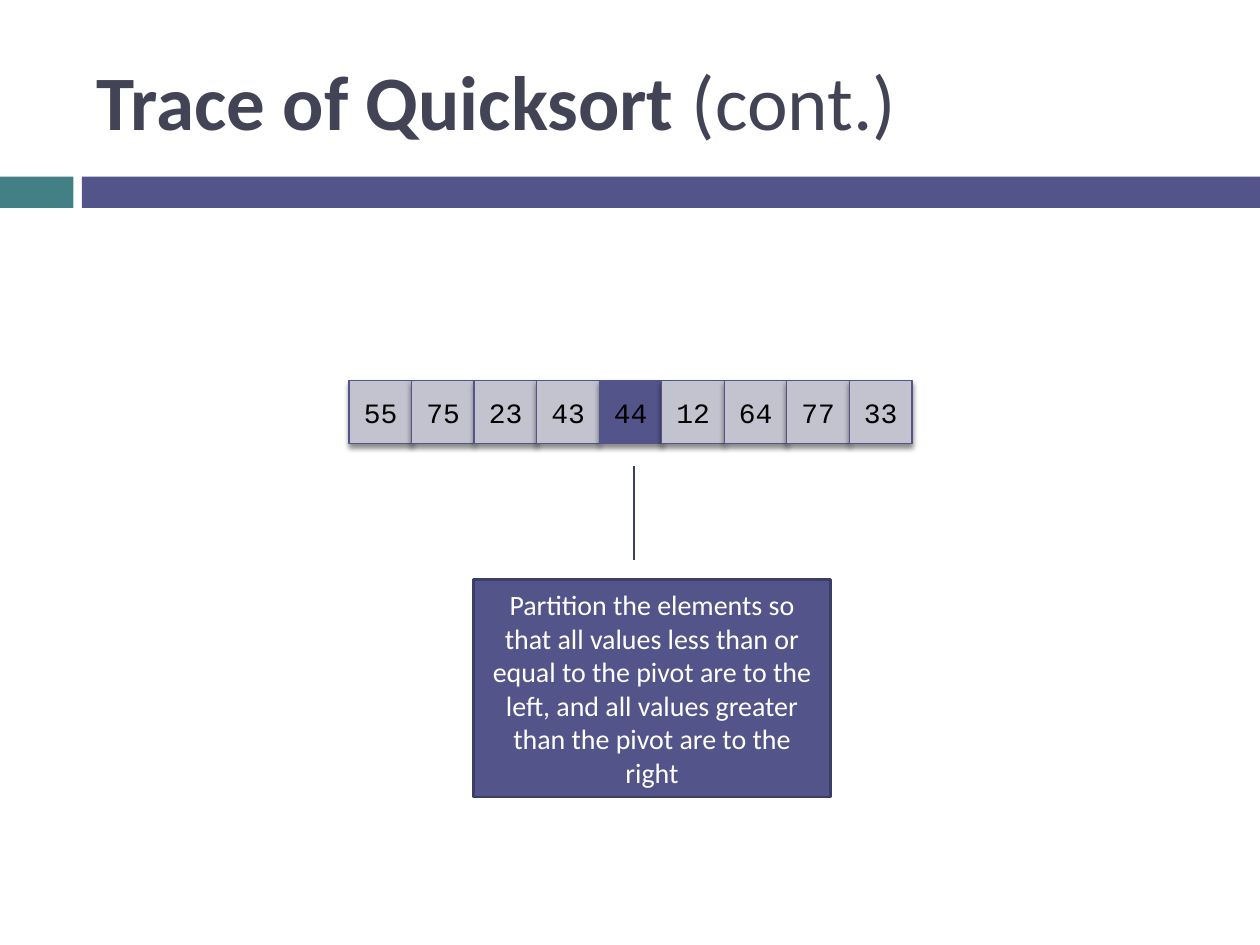
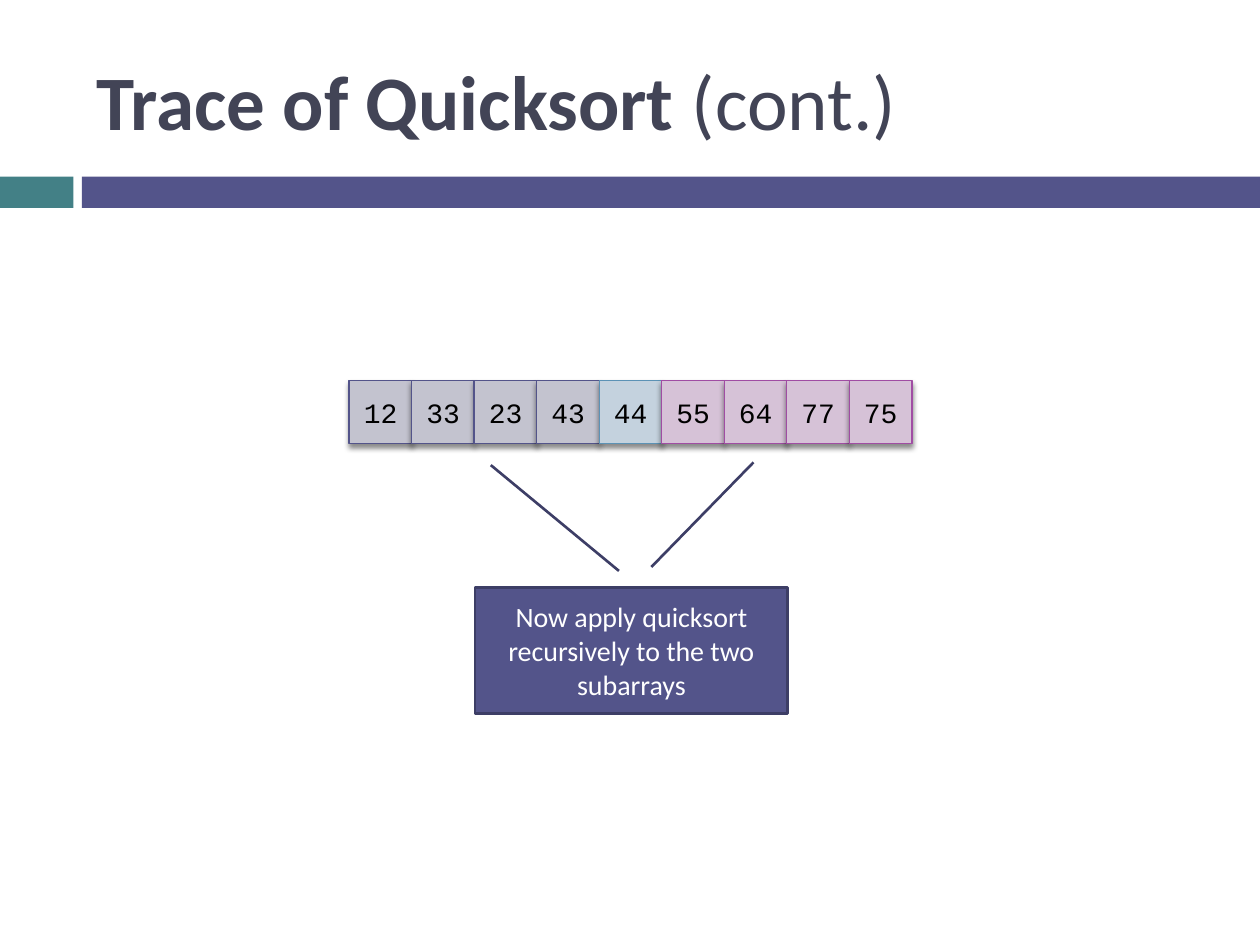
import lxml.etree
import pptx
import pptx.dml.color
import pptx.enum.shapes
import pptx.enum.text
import pptx.oxml.ns
import pptx.util

Cm = pptx.util.Cm
Pt = pptx.util.Pt
RGBColor = pptx.dml.color.RGBColor
Shape = pptx.enum.shapes.MSO_SHAPE
Align = pptx.enum.text.PP_ALIGN

TEAL = RGBColor(0x43, 0x80, 0x86)
INDIGO = RGBColor(0x53, 0x54, 0x8A)
NAVY = RGBColor(0x3D, 0x3E, 0x66)
SLATE = RGBColor(0x42, 0x44, 0x56)
GREY = RGBColor(0xC3, 0xC3, 0xCF)
SKY = RGBColor(0xC4, 0xD2, 0xDE)
BLUE = RGBColor(0x5C, 0x92, 0xB5)
PINK = RGBColor(0xD6, 0xC2, 0xD7)
PLUM = RGBColor(0xA0, 0x4D, 0xA3)
BLACK = RGBColor(0, 0, 0)
WHITE = RGBColor(255, 255, 255)

SANS = "Calibri"
MONO = "Courier New"

# Fill and line of a cell, by its role
PLAIN = (GREY, INDIGO)
PIVOT = (INDIGO, INDIGO)
DONE = (SKY, BLUE)
UPPER = (PINK, PLUM)


def add_xml(parent, tag, **attrs):
    return lxml.etree.SubElement(parent, pptx.oxml.ns.qn(tag), attrs)


def write(shape, *runs, size=16, font=SANS, color=WHITE, align=Align.CENTER):
    """Fill the shape with one paragraph of (text, bold) runs."""
    frame = shape.text_frame
    frame.word_wrap = True
    frame.vertical_anchor = pptx.enum.text.MSO_ANCHOR.MIDDLE
    para = frame.paragraphs[0]
    para.alignment = align
    for text, bold in runs:
        run = para.add_run()
        run.text = text
        run.font.size = Pt(size)
        run.font.name = font
        run.font.bold = bold
        run.font.color.rgb = color


class Deck:
    """Holds the slide style and the slide being drawn."""

    def __init__(self):
        self.prs = pptx.Presentation()
        self.prs.slide_width = Cm(25.4)
        self.prs.slide_height = Cm(19.05)
        self.slide = None

    def start(self):
        """Open a slide with the bands and the title."""
        self.slide = self.prs.slides.add_slide(self.prs.slide_layouts[6])
        self.box((0, 3.56, 1.48, 0.63), TEAL)
        self.box((1.65, 3.56, 23.75, 0.63), INDIGO)
        title = self.slide.shapes.add_textbox(Cm(1.7), Cm(0.64), Cm(22.66), Cm(2.74))
        write(title, ("Trace of Quicksort ", True), ("(cont.)", False),
              size=44, color=SLATE, align=Align.LEFT)

    def box(self, at, fill, line=None, width=0.79, kind=Shape.RECTANGLE, group=None):
        shapes = (group or self.slide).shapes
        shape = shapes.add_shape(kind, *map(Cm, at))
        shape.shadow.inherit = False
        shape.fill.solid()
        shape.fill.fore_color.rgb = fill
        if line is None:
            shape.line.fill.background()
        else:
            shape.line.color.rgb = line
            shape.line.width = Pt(width)
        return shape

    def shade(self, shape):
        """Give the shape a soft shadow below it."""
        effects = shape._element.spPr.find(pptx.oxml.ns.qn("a:effectLst"))
        outer = add_xml(effects, "a:outerShdw", blurRad=str(Pt(3)),
                        dist=str(Pt(2.4)), dir="5400000", rotWithShape="0")
        tint = add_xml(outer, "a:srgbClr", val=str(BLACK))
        add_xml(tint, "a:alpha", val="45000")

    def array(self, cells):
        """Draw a row of (value, role) cells."""
        group = self.slide.shapes.add_group_shape()
        side, step = 1.27, 1.26
        for i, (value, (fill, line)) in enumerate(cells):
            cell = self.box((7.04 + i * step, 7.67, side, side), fill, line, group=group)
            self.shade(cell)
            write(cell, (str(value), False), font=MONO, color=BLACK)

    def note(self, text, at, tail):
        """Draw a callout; tail holds y and x of both line ends, as shares of its size."""
        shape = self.box(at, INDIGO, NAVY, 1.5, Shape.LINE_CALLOUT_1)
        for i, share in enumerate(tail):
            shape.adjustments[i] = share
        write(shape, (text, False))

    def line(self, start, end):
        line = self.slide.shapes.add_connector(
            pptx.enum.shapes.MSO_CONNECTOR.STRAIGHT, *map(Cm, start + end))
        line.line.color.rgb = NAVY
        line.line.width = Pt(1.5)
        add_xml(line._element.spPr, "a:effectLst")


def main():
    deck = Deck()

    deck.start()
    values = [55, 75, 23, 43, 44, 12, 64, 77, 33]
    deck.array([(v, PIVOT if v == 44 else PLAIN) for v in values])
    deck.note("Partition the elements so that all values less than or equal to the "
              "pivot are to the left, and all values greater than the pivot are to "
              "the right",
              (9.55, 11.68, 7.19, 4.39), (-0.09, 0.45, -0.52, 0.45))

    deck.start()
    values = [12, 33, 23, 43, 44, 55, 64, 77, 75]
    deck.array([(v, PLAIN if v < 44 else DONE if v == 44 else UPPER) for v in values])
    deck.note("Now apply quicksort recursively to the two subarrays",
              (9.58, 11.84, 6.3, 2.54), (-0.13, 0.46, -0.97, 0.05))
    deck.line((13.13, 11.43), (15.19, 9.32))

    deck.prs.save("out.pptx")


if __name__ == "__main__":
    main()
